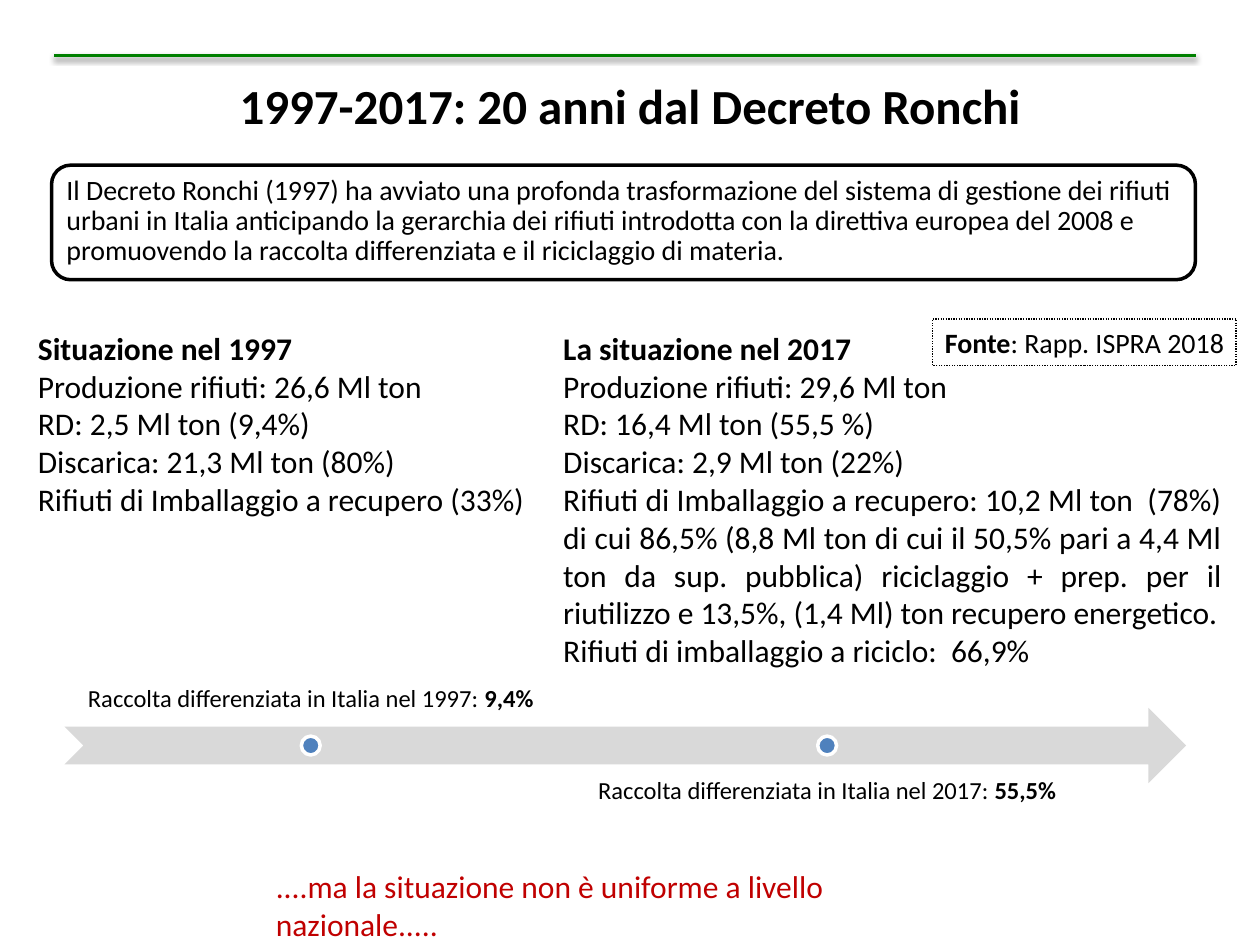
from lxml import etree
from pptx import Presentation
from pptx.dml.color import RGBColor
from pptx.enum.dml import MSO_LINE
from pptx.enum.shapes import MSO_CONNECTOR, MSO_SHAPE
from pptx.enum.text import MSO_ANCHOR, MSO_AUTO_SIZE, PP_ALIGN
from pptx.oxml.ns import qn
from pptx.util import Cm, Pt

CENTER, JUSTIFY = PP_ALIGN.CENTER, PP_ALIGN.JUSTIFY
TOP, MIDDLE, BOTTOM = MSO_ANCHOR.TOP, MSO_ANCHOR.MIDDLE, MSO_ANCHOR.BOTTOM

BLACK = RGBColor(0x00, 0x00, 0x00)
WHITE = RGBColor(0xFF, 0xFF, 0xFF)
GREEN = RGBColor(0x00, 0x80, 0x00)
GREY = RGBColor(0xD9, 0xD9, 0xD9)
BLUE = RGBColor(0x4F, 0x81, 0xBD)
RED = RGBColor(0xC0, 0x00, 0x00)

# Content: a paragraph is a list of (text, bold) runs
TITLE = "1997-2017: 20 anni dal Decreto Ronchi"
INTRO = (
    "Il Decreto Ronchi (1997) ha avviato una profonda trasformazione del sistema di "
    "gestione dei rifiuti urbani in Italia anticipando la gerarchia dei rifiuti "
    "introdotta con la direttiva europea del 2008 e promuovendo la raccolta "
    "differenziata e il riciclaggio di materia."
)
COLUMNS = [
    ((0.51, 6.5, 10.59, 4.11), "Situazione nel 1997", [
        "Produzione rifiuti: 26,6 Ml ton",
        "RD: 2,5 Ml ton (9,4%)",
        "Discarica: 21,3 Ml ton (80%)",
        "Rifiuti di Imballaggio a recupero (33%)",
    ]),
    ((11.1, 6.5, 13.79, 7.19), "La situazione nel 2017", [
        "Produzione rifiuti: 29,6 Ml ton",
        "RD: 16,4 Ml ton (55,5 %)",
        "Discarica: 2,9 Ml ton (22%)",
        "Rifiuti di Imballaggio a recupero: 10,2 Ml ton  (78%) di cui 86,5% (8,8 Ml ton "
        "di cui il 50,5% pari a 4,4 Ml ton da sup. pubblica) riciclaggio + prep. per il "
        "riutilizzo e 13,5%, (1,4 Ml) ton recupero energetico.",
        "Rifiuti di imballaggio a riciclo:  66,9%",
    ]),
]
# Year, share, label left, label offset from the arrow top, anchor
MILESTONES = [
    ("1997", "9,4%", 1.3, -1.14, BOTTOM),
    ("2017", "55,5%", 11.71, 1.14, TOP),
]
CLOSING = "....ma la situazione non è uniforme a livello nazionale....."
SOURCE = [("Fonte", True), (": Rapp. ISPRA 2018", False)]

# Timeline geometry in centimetres
ARROW_LEFT, ARROW_TOP, ARROW_W, ARROW_H = 1.3, 14.27, 22.61, 1.52
LABEL_W, DOT = 9.93, 0.38


def cm(*lengths):
    return [Cm(v) for v in lengths]


def place(sp, box):
    sp.left, sp.top, sp.width, sp.height = cm(*box)


def write(sp, paragraphs, size, color=BLACK, margin=None, para=None, **frame):
    tf = sp.text_frame
    frame = {"word_wrap": True, "auto_size": MSO_AUTO_SIZE.NONE,
             "vertical_anchor": TOP, **frame}
    if margin is not None:
        for side in ("left", "top", "right", "bottom"):
            frame[f"margin_{side}"] = Cm(margin)
    for name, value in frame.items():
        setattr(tf, name, value)
    for i, runs in enumerate(paragraphs):
        p = tf.add_paragraph() if i else tf.paragraphs[0]
        for name, value in (para or {}).items():
            setattr(p, name, value)
        for text, bold in runs:
            r = p.add_run()
            r.text = text
            for name, value in {"name": "Calibri", "size": Pt(size), "bold": bold}.items():
                setattr(r.font, name, value)
            r.font.color.rgb = color
    return tf


def add_shape(kind, box, fill=None, line=None, width=2):
    sp = s.shapes.add_shape(kind, *cm(*box))
    sp.shadow.inherit = False
    if fill is None:
        sp.fill.background()
    else:
        sp.fill.solid()
        sp.fill.fore_color.rgb = fill
    if line is None:
        sp.line.fill.background()
    else:
        sp.line.color.rgb = line
        sp.line.width = Pt(width)
    return sp


def add_text(box, *args, **kwargs):
    return write(s.shapes.add_textbox(*cm(*box)), *args, **kwargs)


prs = Presentation()
prs.slide_width, prs.slide_height = cm(25.4, 19.05)
s = prs.slides.add_slide(prs.slide_layouts[3])
title, *bodies = [ph for ph in s.placeholders if ph.placeholder_format.idx in (0, 1, 2)]

# Title
place(title, (1.27, 0.53, 22.86, 3.18))
write(title, [[(TITLE, True)]], 28, para={"alignment": CENTER}, vertical_anchor=MIDDLE)

# The two situations, as lists without bullets
for sp, (box, heading, items) in zip(bodies, COLUMNS):
    place(sp, box)
    tf = write(sp, [[(heading, True)]] + [[(item, False)] for item in items], 18,
               para={"alignment": JUSTIFY, "space_before": Pt(0)})
    for p in tf.paragraphs:
        pPr = p._p.get_or_add_pPr()
        pPr.set("marL", "0")
        pPr.set("indent", "0")
        etree.SubElement(pPr, qn("a:buNone"))

# Introduction
add_shape(MSO_SHAPE.ROUNDED_RECTANGLE, (1.04, 3.33, 23.06, 2.31), WHITE, BLACK)
add_text((1.17, 3.43, 22.83, 2.08), [[(INTRO, False)]], 16, margin=0.17,
         para={"line_spacing": 0.9}, vertical_anchor=MIDDLE)

# Timeline: each dot sits on the arrow's axis, centred on its label
add_shape(MSO_SHAPE.NOTCHED_RIGHT_ARROW, (ARROW_LEFT, ARROW_TOP, ARROW_W, ARROW_H), GREY)
for year, share, left, offset, anchor in MILESTONES:
    label = [(f"Raccolta differenziata in Italia nel {year}: ", False), (share, True)]
    add_text((left, ARROW_TOP + offset, LABEL_W, ARROW_H), [label], 14, margin=0.28,
             para={"alignment": CENTER, "line_spacing": 0.9}, vertical_anchor=anchor)
    add_shape(MSO_SHAPE.OVAL, (left + (LABEL_W - DOT) / 2,
                               ARROW_TOP + (ARROW_H - DOT) / 2, DOT, DOT), BLUE, WHITE)

# Green rule with a soft shadow
rule = s.shapes.add_connector(MSO_CONNECTOR.STRAIGHT, *cm(1.09, 1.12, 24.1, 1.12))
rule.line.color.rgb = GREEN
rule.line.width = Pt(2)
effects = etree.SubElement(rule._element.spPr, qn("a:effectLst"))
shadow = etree.SubElement(effects, qn("a:outerShdw"), blurRad=str(Pt(3.1)),
                          dist=str(Pt(1.6)), dir="5400000", rotWithShape="0")
shade = etree.SubElement(shadow, qn("a:srgbClr"), val=str(BLACK))
etree.SubElement(shade, qn("a:alpha"), val="38000")

# Closing remark and source
add_text((5.31, 17.35, 14.8, 1.02), [[(CLOSING, False)]], 18, RED)
source = add_shape(MSO_SHAPE.RECTANGLE, (18.8, 6.43, 6.12, 0.94), line=BLACK, width=0.75)
source.line.dash_style = MSO_LINE.ROUND_DOT
write(source, [SOURCE], 16, para={"alignment": PP_ALIGN.LEFT}, word_wrap=False)

prs.save("out.pptx")
